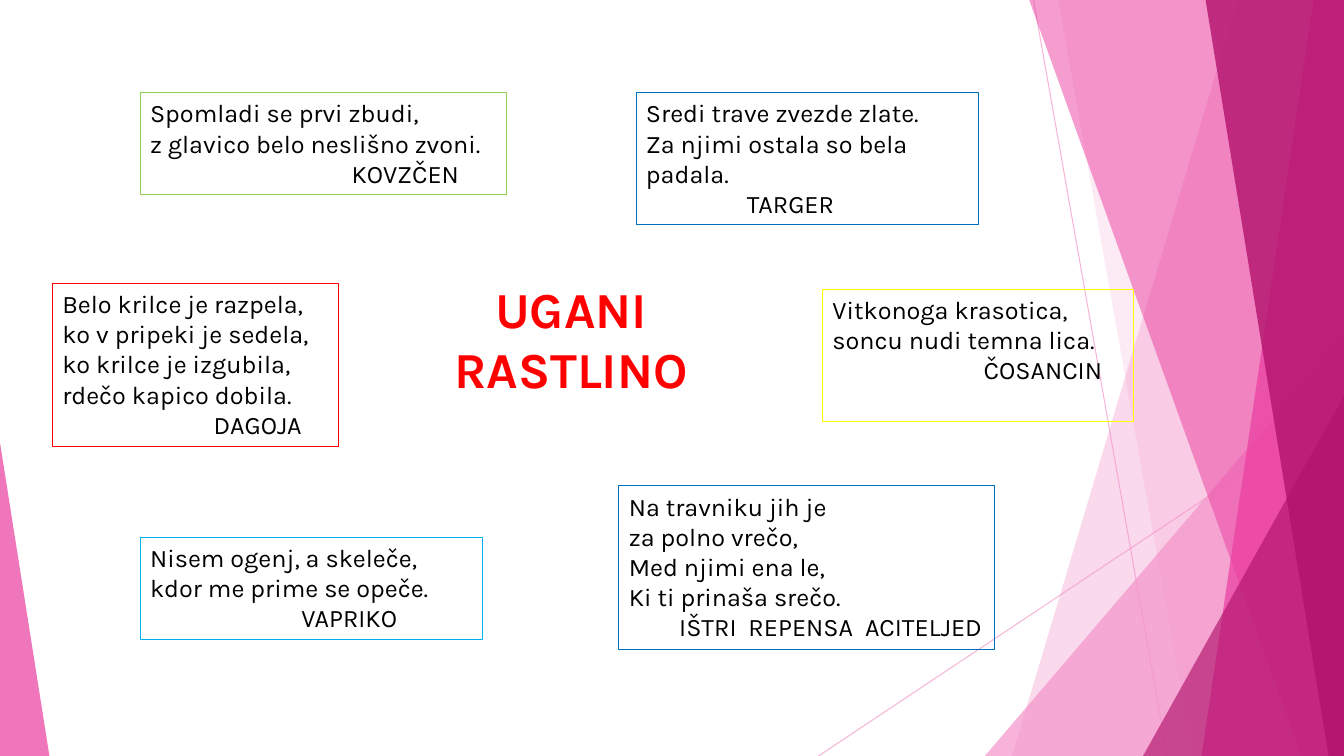
from pptx import Presentation
from pptx.dml.color import RGBColor
from pptx.enum.shapes import MSO_CONNECTOR, MSO_SHAPE
from pptx.enum.text import MSO_ANCHOR, PP_ALIGN
from pptx.oxml.ns import qn
from pptx.util import Inches, Pt
from lxml import etree

STRAIGHT = MSO_CONNECTOR.STRAIGHT
TRIANGLE = MSO_SHAPE.ISOSCELES_TRIANGLE
TOP = MSO_ANCHOR.TOP
LEFT, CENTER = PP_ALIGN.LEFT, PP_ALIGN.CENTER

PALE_PINK = RGBColor(0xF4, 0x96, 0xCB)
PINK = RGBColor(0xEB, 0x3D, 0x9F)
MAGENTA = RGBColor(0xB2, 0x13, 0x6D)
BLACK = RGBColor(0x00, 0x00, 0x00)
RED = RGBColor(0xFF, 0x00, 0x00)
GREEN = RGBColor(0x92, 0xD0, 0x50)
BLUE = RGBColor(0x00, 0x70, 0xC0)
SKY = RGBColor(0x00, 0xB0, 0xF0)
YELLOW = RGBColor(0xFF, 0xFF, 0x00)

RIDDLES = [
    ((10.43, 12.27, 27.23, 13.47), GREEN,
     ["Spomladi se prvi zbudi,", "z glavico belo neslišno zvoni."], "KOVZČEN", 4),
    ((47.33, 12.27, 25.5, 17.47), BLUE,
     ["Sredi trave zvezde zlate.", "Za njimi ostala so bela padala."], "TARGER", 2),
    ((3.9, 37.47, 21.3, 21.6), RED,
     ["Belo krilce je razpela,", "ko v pripeki je sedela,",
      "ko krilce je izgubila,", "rdečo kapico dobila."], "DAGOJA", 3),
    ((61.2, 38.27, 23.18, 17.47), YELLOW,
     ["Vitkonoga krasotica,", "soncu nudi temna lica."], "ČOSANCIN", 3),
    ((10.43, 71.07, 25.5, 13.47), SKY,
     ["Nisem ogenj, a skeleče,", "kdor me prime se opeče."], "VAPRIKO", 3),
    ((46.05, 64.27, 27.98, 21.6), BLUE,
     ["Na travniku jih je", "za polno vrečo,", "Med njimi ena le,",
      "Ki ti prinaša srečo."], "IŠTRI  REPENSA  ACITELJED", 1),
]


class RiddlePage:
    """Draws on one slide, with lengths in percent of its width and height."""

    frame_format = {"word_wrap": True, "vertical_anchor": TOP}
    riddle_font = {"name": "Karla", "size": Pt(18), "bold": False}
    title_font = {"name": "Karla", "size": Pt(36), "bold": True}
    line_width = Pt(0.75)
    tab_width = Inches(0.5)

    def __init__(self, deck):
        self.width, self.height = deck.slide_width, deck.slide_height
        self.shapes = deck.slides.add_slide(deck.slide_layouts[6]).shapes

    def scale(self, *lengths):
        sides = (self.width, self.height) * 2
        return [round(side * share / 100) for side, share in zip(sides, lengths)]

    def apply(self, target, values):
        for name, value in values.items():
            setattr(target, name, value)

    def tint(self, fill, color, opacity):
        fill.solid()
        fill.fore_color.rgb = color

    def set_opacity(self, shape, opacity):
        color = shape._element.spPr.find(".//" + qn("a:srgbClr"))
        etree.SubElement(color, qn("a:alpha"), val=str(opacity * 1000))

    def ray(self, *ends):
        ray = self.shapes.add_connector(STRAIGHT, *self.scale(*ends))
        ray.line.color.rgb = PALE_PINK
        ray.line.width = self.line_width
        self.set_opacity(ray, 70)
        etree.SubElement(ray._element.spPr, qn("a:effectLst"))

    def paint(self, shape, color, opacity):
        shape.shadow.inherit = False
        shape.fill.solid()
        shape.fill.fore_color.rgb = color
        shape.line.fill.background()
        self.set_opacity(shape, opacity)

    def veil(self, top_x, bottom_x, color, opacity):
        outline = self.shapes.build_freeform(*self.scale(top_x, 0), scale=1.0)
        corners = [(100, 0), (100, 100), (bottom_x, 100)]
        outline.add_line_segments([self.scale(*corner) for corner in corners])
        self.paint(outline.convert_to_shape(), color, opacity)

    def wedge(self, left, top, width, apex, color, opacity):
        place = self.scale(left, top, width, 100 - top)
        wedge = self.shapes.add_shape(TRIANGLE, *place)
        wedge.adjustments[0] = apex
        self.paint(wedge, color, opacity)

    def text_box(self, place, lines, font, color, align=LEFT):
        box = self.shapes.add_textbox(*self.scale(*place))
        frame = box.text_frame
        self.apply(frame, self.frame_format)
        frame.text = "\n".join(lines)
        for para in frame.paragraphs:
            para.alignment = align
            for span in para.runs:
                self.apply(span.font, font)
                span.font.color.rgb = color
        return box

    def riddle(self, place, border, verses, answer, tabs):
        box = self.text_box(place, verses + [answer], self.riddle_font, BLACK)
        box.line.color.rgb = border
        box.line.width = self.line_width
        answer_para = box.text_frame.paragraphs[-1]
        answer_para._p.get_or_add_pPr().set("marL", str(tabs * self.tab_width))

    def title(self, place, text):
        self.text_box(place, [text], self.title_font, RED, CENTER)


def main():
    deck = Presentation()
    deck.slide_width, deck.slide_height = Inches(13.33), Inches(7.5)
    page = RiddlePage(deck)

    page.ray(76.9, 0, 86.85, 100)
    page.ray(100, 53.73, 60.9, 100)
    page.veil(92.1, 75.3, PALE_PINK, 36)
    page.veil(78.75, 88.73, PALE_PINK, 20)
    page.wedge(73.28, 44.4, 26.72, 1, PALE_PINK, 72)
    page.veil(76.58, 96.83, PINK, 50)
    page.veil(97.73, 89.4, PINK, 70)
    page.veil(89.7, 98.85, MAGENTA, 80)
    page.wedge(85.05, 52.4, 14.95, 1, MAGENTA, 66)
    page.wedge(0, 58.53, 3.68, 0, PINK, 70)

    for riddle in RIDDLES:
        page.riddle(*riddle)
    page.title((32.4, 36.13, 20.18, 17.47), "UGANI RASTLINO")

    deck.save("out.pptx")


if __name__ == "__main__":
    main()
